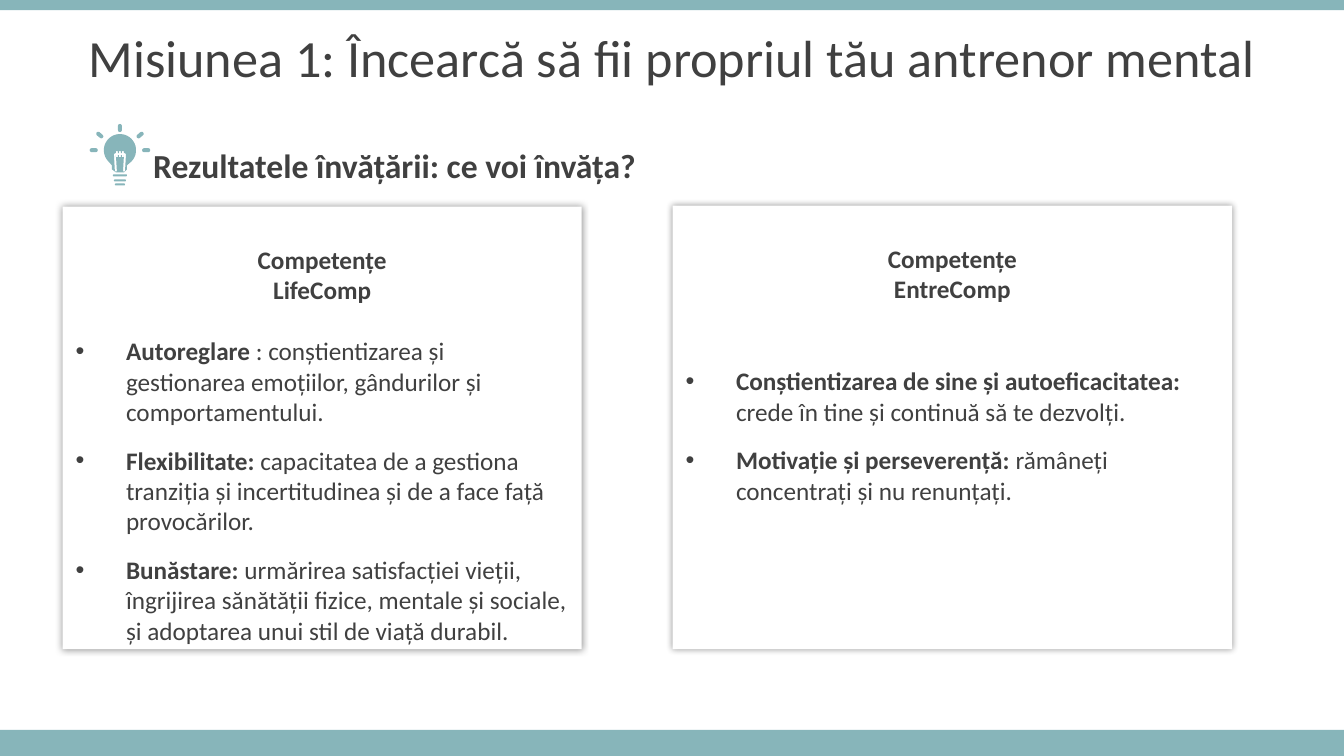
from math import cos, radians, sin

from lxml import etree
from pptx import Presentation
from pptx import util as u
from pptx.dml.color import RGBColor
from pptx.enum import shapes, text
from pptx.oxml.ns import qn

COLORS = {"teal": "87B5BA", "ink": "404040", "panel": "FFFFFF", "shadow": "000000"}
LINE = 22  # height of one 18 pt line, in points


def write(paragraph, wording, size, bold=False):
    run = paragraph.add_run()
    run.text = wording
    for name, value in {"name": "Calibri", "size": u.Pt(size), "bold": bold}.items():
        setattr(run.font, name, value)
    run.font.color.rgb = RGBColor.from_string(COLORS["ink"])


def arc(cx, cy, radius, start, end, step):
    """Points along a circle; angles in degrees, clockwise from the right."""
    return [(cx + radius * cos(radians(a)), cy + radius * sin(radians(a)))
            for a in range(start, end + 1, step)]


prs = Presentation()
prs.slide_width, prs.slide_height = u.Inches(13.33), u.Inches(7.5)
slide = prs.slides.add_slide(prs.slide_layouts[3])
title, life_panel, entre_panel = slide.placeholders

# Bands along the top and bottom edges
for top, height in ((0, 0.1), (7.24, 0.26)):
    band = slide.shapes.add_shape(shapes.MSO_SHAPE.RECTANGLE, 0, u.Inches(top),
                                  prs.slide_width, u.Inches(height))
    band.shadow.inherit = False
    band.fill.solid()
    band.fill.fore_color.rgb = RGBColor.from_string(COLORS["teal"])
    band.line.fill.background()

# Title
title.left, title.top, title.width, title.height = 0, u.Inches(0.18), prs.slide_width, u.Inches(0.84)
title.text_frame.auto_size = text.MSO_AUTO_SIZE.NONE
title.text_frame.vertical_anchor = text.MSO_ANCHOR.MIDDLE
heading = title.text_frame.paragraphs[0]
heading.alignment = text.PP_ALIGN.CENTER
heading.line_spacing = 0.9
write(heading, "Misiunea 1: Încearcă să fii propriul tău antrenor mental", 37.3)

# Light bulb: glass, filament cut-out, then rounded rays and base bars
glass = arc(1.19, 1.49, 0.16, 135, 405, 10) + [
    (1.26, 1.64), (1.26, 1.68), (1.23, 1.71), (1.15, 1.71), (1.11, 1.68), (1.11, 1.64)]
teeth = (1.16, 1.19, 1.22)
filament = [(1.14, 1.52), (1.13, 1.53), (1.14, 1.7), (1.16, 1.7), (1.15, 1.54)]
for x in teeth:
    filament += [(x - 0.01, 1.54), (x - 0.01, 1.56), (x + 0.01, 1.56), (x + 0.01, 1.54)]
filament += [(1.23, 1.54), (1.22, 1.7), (1.24, 1.7), (1.25, 1.53), (1.24, 1.52)]
for x in reversed(teeth):
    filament += [(x + 0.01, 1.52), (x + 0.01, 1.5), (x - 0.01, 1.5), (x - 0.01, 1.52)]

outlines = [glass, filament]
bars = [  # centre x, centre y, half length between cap centres, cap radius, angle
    (0.93, 1.49, 0.02, 0.02, 0), (1.45, 1.49, 0.02, 0.02, 0), (1.19, 1.27, 0.02, 0.02, 90),
    (0.99, 1.34, 0.02, 0.02, 40), (1.39, 1.34, 0.02, 0.02, 140),
    (1.19, 1.74, 0.06, 0.01, 0), (1.19, 1.79, 0.05, 0.01, 0), (1.19, 1.83, 0.04, 0.01, 0)]
for cx, cy, half, cap, angle in bars:
    dx, dy = half * cos(radians(angle)), half * sin(radians(angle))
    outlines.append(arc(cx + dx, cy + dy, cap, angle - 90, angle + 90, 30)
                    + arc(cx - dx, cy - dy, cap, angle + 90, angle + 270, 30))

outlines = [[(u.Inches(x), u.Inches(y)) for x, y in outline] for outline in outlines]
builder = slide.shapes.build_freeform(*outlines[0][0])
builder.add_line_segments(outlines[0][1:])
for outline in outlines[1:]:
    builder.move_to(*outline[0])
    builder.add_line_segments(outline[1:])
bulb = builder.convert_to_shape()
bulb.shadow.inherit = False
bulb.fill.solid()
bulb.fill.fore_color.rgb = RGBColor.from_string(COLORS["teal"])
bulb.line.fill.background()

# Question next to the bulb
question = slide.shapes.add_textbox(*map(u.Inches, (1.42, 1.43, 6.51, 0.41)))
question.text_frame.word_wrap = True
question.text_frame.vertical_anchor = text.MSO_ANCHOR.MIDDLE
write(question.text_frame.paragraphs[0], "Rezultatele învățării: ce voi învăța?", 24, True)

# Competence panels
panels = [
    (life_panel, (0.62, 2.05, 5.15, 4.39), "LifeComp", LINE, [
        ("Autoreglare ", ": conștientizarea și gestionarea emoțiilor, gândurilor și comportamentului."),
        ("Flexibilitate: ", "capacitatea de a gestiona tranziția și incertitudinea și de a face față provocărilor."),
        ("Bunăstare: ", "urmărirea satisfacției vieții, îngrijirea sănătății fizice, mentale și sociale, "
                        "și adoptarea unui stil de viață durabil."),
    ]),
    (entre_panel, (6.67, 2.04, 5.55, 4.4), "EntreComp", 2 * LINE, [
        ("Conștientizarea de sine și autoeficacitatea: ", "crede în tine și continuă să te dezvolți."),
        ("Motivație și perseverență: ", "rămâneți concentrați și nu renunțați."),
    ]),
]
frame_format = {
    "auto_size": text.MSO_AUTO_SIZE.NONE, "word_wrap": True,
    "vertical_anchor": text.MSO_ANCHOR.TOP,
    "margin_left": u.Inches(0.13), "margin_right": u.Inches(0.13),
    "margin_top": u.Inches(0.07) + u.Pt(LINE), "margin_bottom": u.Inches(0.07),
}
for panel, place, framework, list_gap, competences in panels:
    panel.left, panel.top, panel.width, panel.height = map(u.Inches, place)
    panel.fill.solid()
    panel.fill.fore_color.rgb = RGBColor.from_string(COLORS["panel"])
    effects = etree.SubElement(panel._element.spPr, qn("a:effectLst"))
    glow = etree.SubElement(effects, qn("a:outerShdw"), blurRad=str(u.Pt(5)), dist="0", dir="0",
                            algn="ctr", rotWithShape="0")
    tint = etree.SubElement(glow, qn("a:srgbClr"), val=COLORS["shadow"])
    etree.SubElement(tint, qn("a:alpha"), val="40000")

    frame = panel.text_frame
    for name, value in frame_format.items():
        setattr(frame, name, value)
    for caption, line in (("Competențe", frame.paragraphs[0]), (framework, frame.add_paragraph())):
        line.alignment = text.PP_ALIGN.CENTER
        line.space_before = u.Pt(0)
        props = line._p.get_or_add_pPr()
        props.set("marL", "0")
        props.set("indent", "0")
        etree.SubElement(props, qn("a:buNone"))
        write(line, caption, 18, True)
    for number, (competence, meaning) in enumerate(competences):
        item = frame.add_paragraph()
        item.space_before = u.Pt(0 if number else list_gap)
        item.space_after = u.Pt(13.3)
        props = item._p.get_or_add_pPr()
        props.set("marL", str(u.Inches(0.5)))
        props.set("indent", str(-u.Inches(0.5)))
        write(item, competence, 18, True)
        write(item, meaning, 18)

prs.save("out.pptx")
